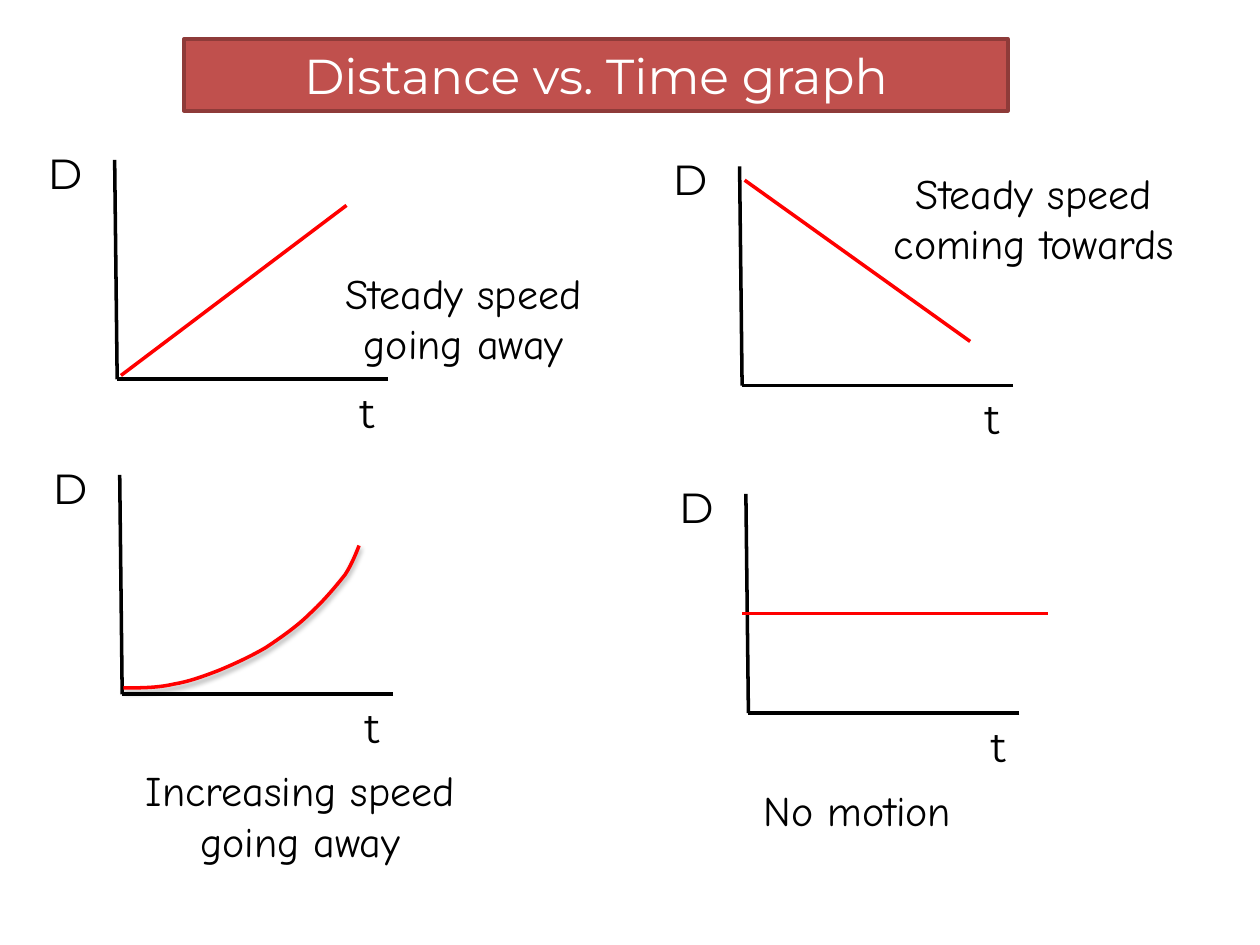
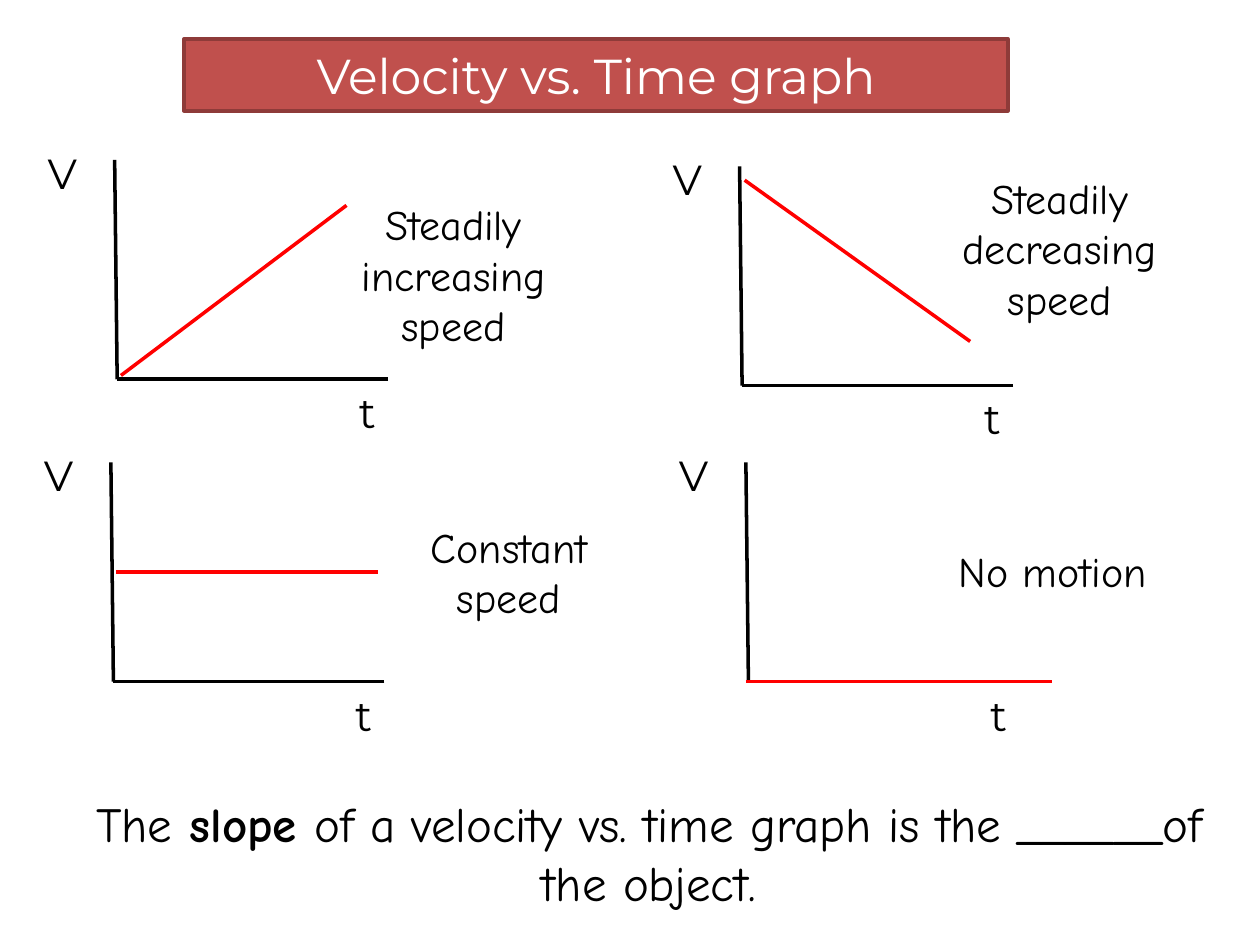
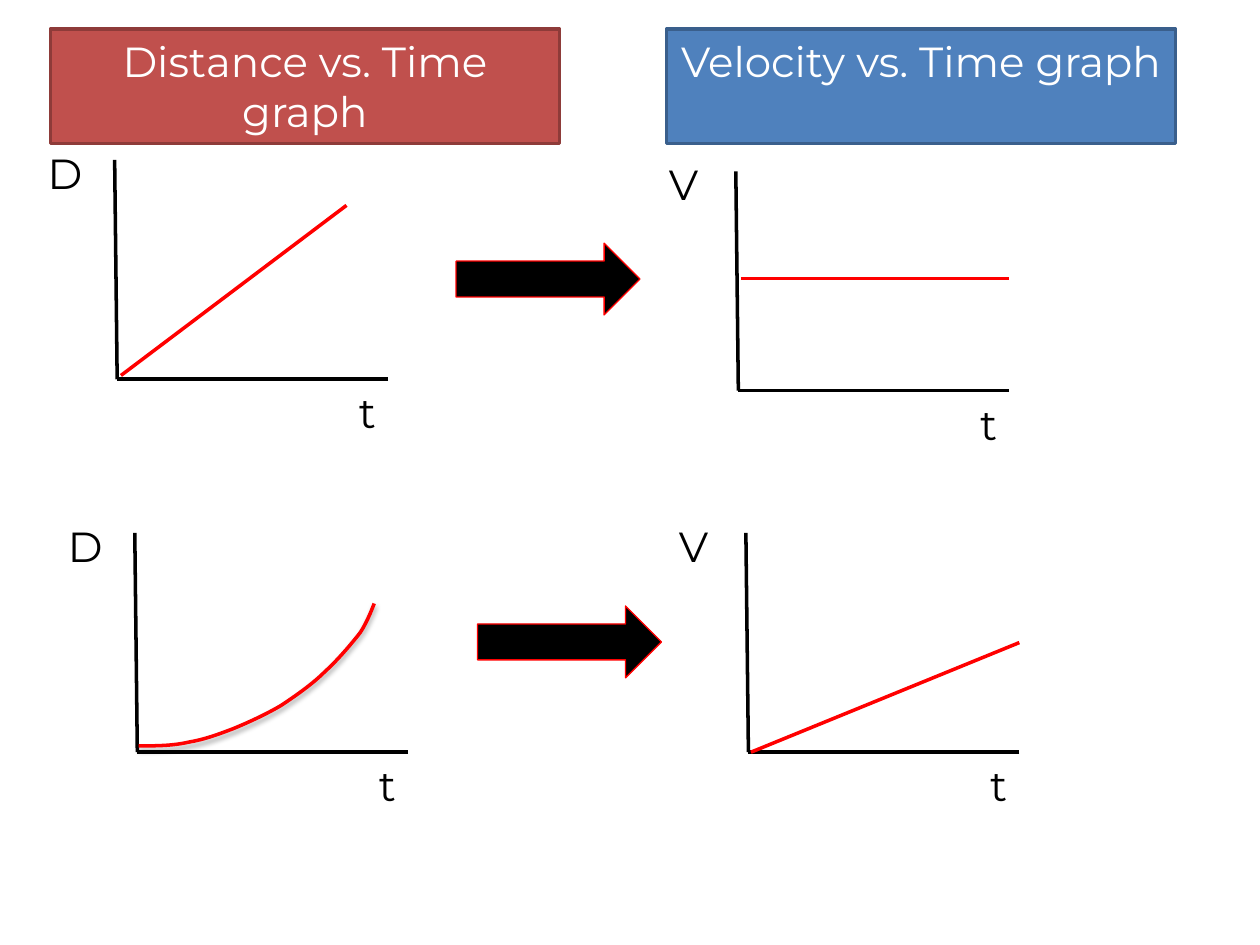
from dataclasses import dataclass
from typing import NamedTuple

from lxml.etree import SubElement
from pptx import Presentation
from pptx.dml.color import RGBColor
from pptx.enum.shapes import MSO_CONNECTOR, MSO_SHAPE
from pptx.enum.text import MSO_ANCHOR, PP_ALIGN
from pptx.oxml.ns import qn
from pptx.util import Inches, Pt


@dataclass(frozen=True)
class Theme:
    black: str = "000000"
    white: str = "FFFFFF"
    trace: str = "FF0000"
    red: str = "C0504D"
    red_edge: str = "8E3B39"
    blue: str = "4F81BD"
    blue_edge: str = "3A5F8C"
    label_font: str = "Montserrat"
    caption_font: str = "Comic Neue"
    large: int = 28
    normal: int = 24
    stroke: float = 2
    arrow_stroke: float = 0.75


THEME = Theme()


class Point(NamedTuple):
    x: float
    y: float


class Area(NamedTuple):
    left: float
    top: float
    width: float
    height: float


class Graph(NamedTuple):
    quantity: str
    origin: Point
    trace: tuple  # two points make a line, more make a Bezier curve


class Caption(NamedTuple):
    text: str
    area: Area


class Banner(NamedTuple):
    text: str
    area: Area
    size: int
    fill: str = THEME.red
    edge: str = THEME.red_edge


# Traces, measured from the origin of their graph
RISING = (Point(0.03, -0.03), Point(1.82, -1.38))
FALLING = (Point(0.02, -1.63), Point(1.81, -0.35))
STANDING = (Point(-0.05, -0.79), Point(2.38, -0.79))
ZERO = (Point(-0.02, 0), Point(2.41, 0))
CONSTANT = (Point(0.02, -0.87), Point(2.1, -0.87))
CONSTANT_LONG = (Point(0.02, -0.89), Point(2.15, -0.89))
GENTLE = (Point(0.02, 0), Point(2.15, -0.87))
CURVE = tuple(Point(x, y) for x, y in (
    (0.01, -0.05),
    (0.15, -0.05), (0.28, -0.05), (0.41, -0.08),
    (0.53, -0.10), (0.64, -0.14), (0.77, -0.19),
    (0.89, -0.24), (1.02, -0.30), (1.14, -0.37),
    (1.26, -0.45), (1.39, -0.54), (1.49, -0.64),
    (1.59, -0.73), (1.70, -0.86), (1.77, -0.95),
    (1.83, -1.04), (1.88, -1.18), (1.88, -1.18),
))

WIDE_BANNER = Area(1.46, 0.31, 6.54, 0.57)
TOP_LEFT = Point(0.93, 3.01)
TOP_RIGHT = Point(5.89, 3.06)


def color(value: str) -> RGBColor:
    return RGBColor.from_string(value)


def inches(values: tuple) -> list:
    return [Inches(value) for value in values]


def set_line(shape, value: str, width: float) -> None:
    shape.line.color.rgb = color(value)
    shape.line.width = Pt(width)


def style_span(span, font: str, size: int, value: str) -> None:
    span.font.name = font
    span.font.size = Pt(size)
    span.font.color.rgb = color(value)


def add_text(shapes, text: str, area: Area, font: str, size: int, align=PP_ALIGN.CENTER):
    box = shapes.add_textbox(*inches(area))
    box.text_frame.word_wrap = True
    para = box.text_frame.paragraphs[0]
    para.text = text
    para.alignment = align
    style_span(para.runs[0], font, size, THEME.black)
    return para


def add_line(shapes, start: Point, end: Point, value: str) -> None:
    line = shapes.add_connector(MSO_CONNECTOR.STRAIGHT, *inches(start + end))
    set_line(line, value, THEME.stroke)
    SubElement(line._element.spPr, qn("a:effectLst"))


def add_curve(shapes, points: list) -> None:
    first, *rest = [tuple(inches(point)) for point in points]
    builder = shapes.build_freeform(*first, scale=1.0)
    builder.add_line_segments(rest, close=False)
    curve = builder.convert_to_shape()
    curve.fill.background()
    set_line(curve, THEME.trace, THEME.stroke)

    # Every three segments become one cubic Bezier
    outline = next(curve._element.iter(qn("a:path")))
    segments = outline.findall(qn("a:lnTo"))
    for start in range(0, len(segments), 3):
        bezier = SubElement(outline, qn("a:cubicBezTo"))
        for segment in segments[start:start + 3]:
            bezier.append(segment[0])
            outline.remove(segment)

    # Soft shadow below the curve
    effects = SubElement(curve._element.spPr, qn("a:effectLst"))
    shadow = SubElement(effects, qn("a:outerShdw"), blurRad=str(Pt(3.1)),
                        dist=str(Pt(1.8)), dir="5400000", rotWithShape="0")
    tint = SubElement(shadow, qn("a:srgbClr"), val=THEME.black)
    SubElement(tint, qn("a:alpha"), val="35000")


def add_graph(page, graph: Graph) -> None:
    shapes = page.shapes.add_group_shape().shapes
    x, y = graph.origin
    add_line(shapes, Point(x + 2.15, y), graph.origin, THEME.black)
    add_line(shapes, Point(x - 0.02, y - 1.74), graph.origin, THEME.black)
    labels = ((graph.quantity, Area(x - 0.65, y - 1.89, 0.67, 0.5)),
              ("t", Area(x + 1.82, y + 0.01, 0.5, 0.5)))
    for text, area in labels:
        add_text(shapes, text, area, THEME.label_font, THEME.normal, PP_ALIGN.LEFT)
    points = [Point(x + point.x, y + point.y) for point in graph.trace]
    if len(points) == 2:
        add_line(shapes, *points, THEME.trace)
    else:
        add_curve(shapes, points)


def add_block(page, kind, area: Area, fill: str, edge: str, width: float):
    block = page.shapes.add_shape(kind, *inches(area))
    block.shadow.inherit = False
    block.fill.solid()
    block.fill.fore_color.rgb = color(fill)
    set_line(block, edge, width)
    return block


def add_banner(page, banner: Banner) -> None:
    block = add_block(page, MSO_SHAPE.RECTANGLE, banner.area, banner.fill,
                      banner.edge, THEME.stroke)
    frame = block.text_frame
    frame.word_wrap = True
    frame.vertical_anchor = MSO_ANCHOR.TOP
    para = frame.paragraphs[0]
    para.text = banner.text
    para.alignment = PP_ALIGN.CENTER
    style_span(para.runs[0], THEME.label_font, banner.size, THEME.white)


def add_page(deck, banners: list, graphs: list, captions: list):
    page = deck.slides.add_slide(deck.slide_layouts[6])
    for banner in banners:
        add_banner(page, banner)
    for graph in graphs:
        add_graph(page, graph)
    for text, area in captions:
        add_text(page.shapes, text, area, THEME.caption_font, THEME.normal)
    return page


def add_distance_page(deck) -> None:
    add_page(
        deck,
        [Banner("Distance vs. Time graph", WIDE_BANNER, THEME.large)],
        [Graph("D", TOP_LEFT, RISING),
         Graph("D", TOP_RIGHT, FALLING),
         Graph("D", Point(0.97, 5.51), CURVE),
         Graph("D", Point(5.94, 5.66), STANDING)],
        [Caption("Steady speed going away", Area(2.29, 2.07, 2.78, 0.91)),
         Caption("Steady speed coming towards", Area(6.75, 1.28, 2.91, 0.91)),
         Caption("Increasing speed going away", Area(0.9, 6.02, 2.97, 0.91)),
         Caption("No motion", Area(5.69, 6.18, 2.23, 0.5))],
    )


def add_velocity_page(deck) -> None:
    page = add_page(
        deck,
        [Banner("Velocity vs. Time graph", WIDE_BANNER, THEME.large)],
        [Graph("V", TOP_LEFT, RISING),
         Graph("V", TOP_RIGHT, FALLING),
         Graph("V", Point(0.9, 5.41), CONSTANT),
         Graph("V", Point(5.94, 5.41), ZERO)],
        [Caption("Steadily increasing speed", Area(2.38, 1.53, 2.44, 1.31)),
         Caption("Steadily decreasing speed", Area(7.11, 1.32, 2.6, 1.31)),
         Caption("Constant speed", Area(3, 4.09, 2.08, 0.91)),
         Caption("No motion", Area(7.24, 4.28, 2.23, 0.5))],
    )
    # Sentence to complete
    para = add_text(page.shapes, "The", Area(0.59, 6.25, 9.12, 1.04),
                    THEME.caption_font, THEME.large)
    for text, bold in ((" slope ", True),
                       ("of a velocity vs. time graph is the ______of the object.", False)):
        span = para.add_run()
        span.text = text
        span.font.bold = bold
        style_span(span, THEME.caption_font, THEME.large, THEME.black)


def add_comparison_page(deck) -> None:
    page = add_page(
        deck,
        [Banner("Distance vs. Time graph", Area(0.4, 0.23, 4.04, 0.91), THEME.normal),
         Banner("Velocity vs. Time graph", Area(5.29, 0.23, 4.04, 0.91), THEME.normal,
                THEME.blue, THEME.blue_edge)],
        [Graph("D", TOP_LEFT, RISING),
         Graph("V", Point(5.86, 3.1), CONSTANT_LONG),
         Graph("D", Point(1.09, 5.97), CURVE),
         Graph("V", Point(5.94, 5.97), GENTLE)],
        [],
    )
    # Arrows from distance to velocity
    for left, top in (Point(3.62, 1.93), Point(3.79, 4.81)):
        add_block(page, MSO_SHAPE.RIGHT_ARROW, Area(left, top, 1.46, 0.57),
                  THEME.black, THEME.trace, THEME.arrow_stroke)


def main() -> None:
    deck = Presentation()
    deck.slide_width, deck.slide_height = Inches(10), Inches(7.5)
    add_distance_page(deck)
    add_velocity_page(deck)
    add_comparison_page(deck)
    deck.save("out.pptx")


if __name__ == "__main__":
    main()
